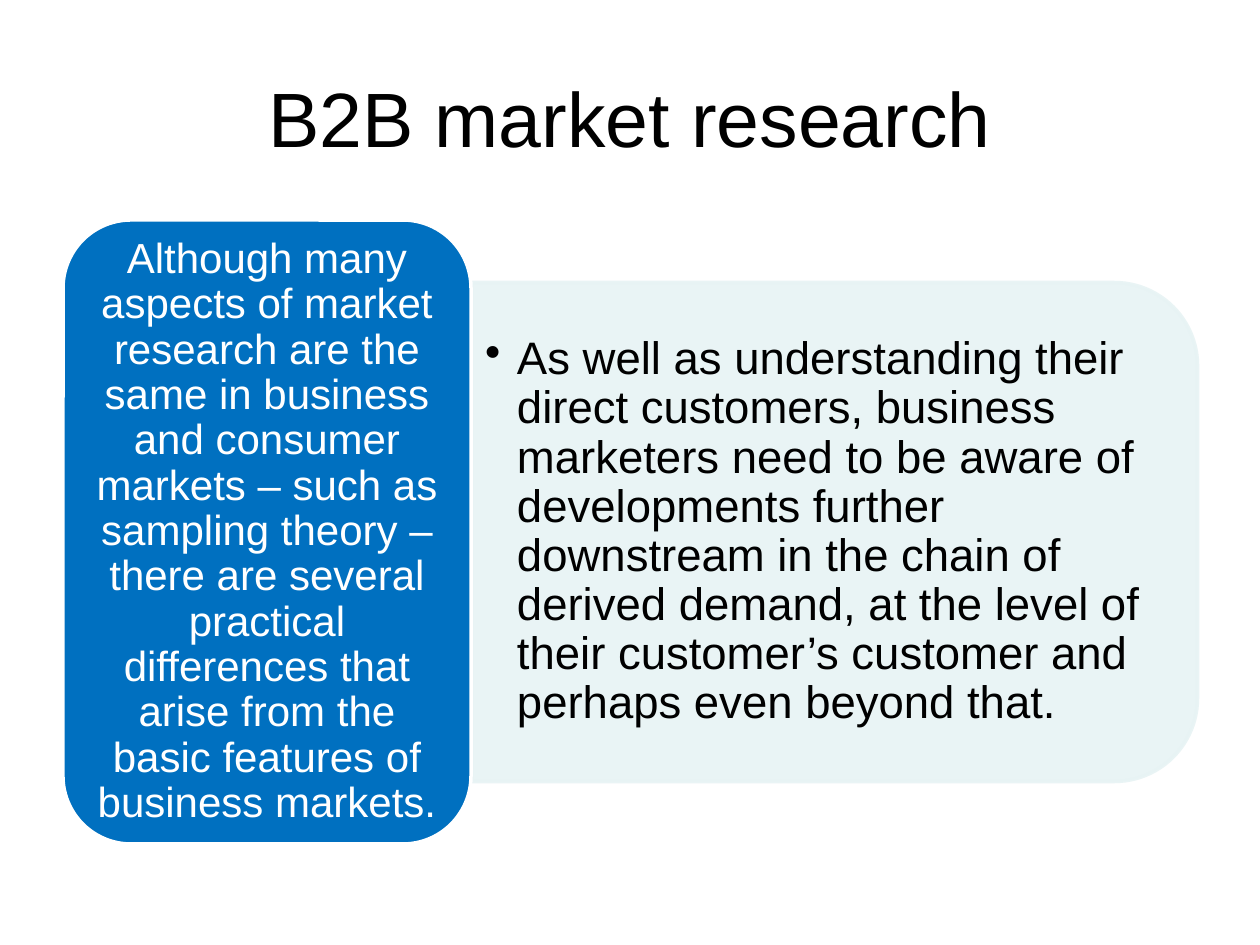
import pptx
import pptx.util
import pptx.dml.color
import pptx.enum.shapes
import pptx.enum.text
import pptx.oxml.ns
from lxml import etree

SCALE = 914400 // 126
FONT = "Arial"
SHAPES = pptx.enum.shapes.MSO_SHAPE
ALIGN = pptx.enum.text.PP_ALIGN
TITLE = "B2B market research"
CLAIM = (
    "Although many aspects of market research are the same in business and "
    "consumer markets – such as sampling theory – there are several practical "
    "differences that arise from the basic features of business markets."
)
DETAIL = (
    "As well as understanding their direct customers, business marketers need "
    "to be aware of developments further downstream in the chain of derived "
    "demand, at the level of their customer’s customer and perhaps even "
    "beyond that."
)


def px(num):
    return pptx.util.Emu(num * SCALE)


def color(code):
    return pptx.dml.color.RGBColor.from_string(code)


def fade(shape, part):
    tag = pptx.oxml.ns.qn("a:srgbClr")
    for node in shape.element.spPr.iter(tag):
        alpha = etree.SubElement(node, pptx.oxml.ns.qn("a:alpha"))
        alpha.set("val", str(part * 1000))


def add_block(slide, kind, box, fill, line):
    shape = slide.shapes.add_shape(kind, *map(px, box))
    shape.shadow.inherit = False
    shape.fill.solid()
    shape.fill.fore_color.rgb = color(fill)
    shape.line.color.rgb = color(line)
    shape.line.width = pptx.util.Pt(2)
    return shape


def add_bullet(para, indent):
    props = para._p.get_or_add_pPr()
    props.set("marL", str(px(indent)))
    props.set("indent", str(px(-indent)))
    mark = etree.SubElement(props, pptx.oxml.ns.qn("a:buChar"))
    mark.set("char", "•")


def add_text(slide, box, text, size, ink, align=ALIGN.CENTER, space=1, indent=0):
    frame = slide.shapes.add_textbox(*map(px, box)).text_frame
    frame.word_wrap = True
    frame.vertical_anchor = pptx.enum.text.MSO_ANCHOR.MIDDLE
    para = frame.paragraphs[0]
    para.text = text
    if indent:
        add_bullet(para, indent)
    para.alignment = align
    para.line_spacing = space
    para.font.name = FONT
    para.font.size = pptx.util.Pt(size)
    para.font.color.rgb = color(ink)
    return frame


def main():
    deck = pptx.Presentation()
    deck.slide_width, deck.slide_height = px(1260), px(945)
    slide = deck.slides.add_slide(deck.slide_layouts[6])

    add_text(slide, (63, 38, 1134, 157), TITLE, 44, "000000")

    panel = add_block(slide, SHAPES.ROUND_2_SAME_RECTANGLE,
                      (585, 169, 499, 726), "E7F3F4", "E7F3F4")
    panel.rotation = 90
    fade(panel, 90)
    frame = add_text(slide, (471, 307, 702, 450), DETAIL, 26, "000000",
                     ALIGN.LEFT, 0.9, 32)
    frame.margin_left = frame.margin_right = px(14)

    add_block(slide, SHAPES.ROUNDED_RECTANGLE,
              (63, 220, 408, 624), "0070C0", "FFFFFF")
    add_text(slide, (83, 240, 368, 584), CLAIM, 24, "FFFFFF", space=0.9)

    deck.save("out.pptx")


if __name__ == "__main__":
    main()
